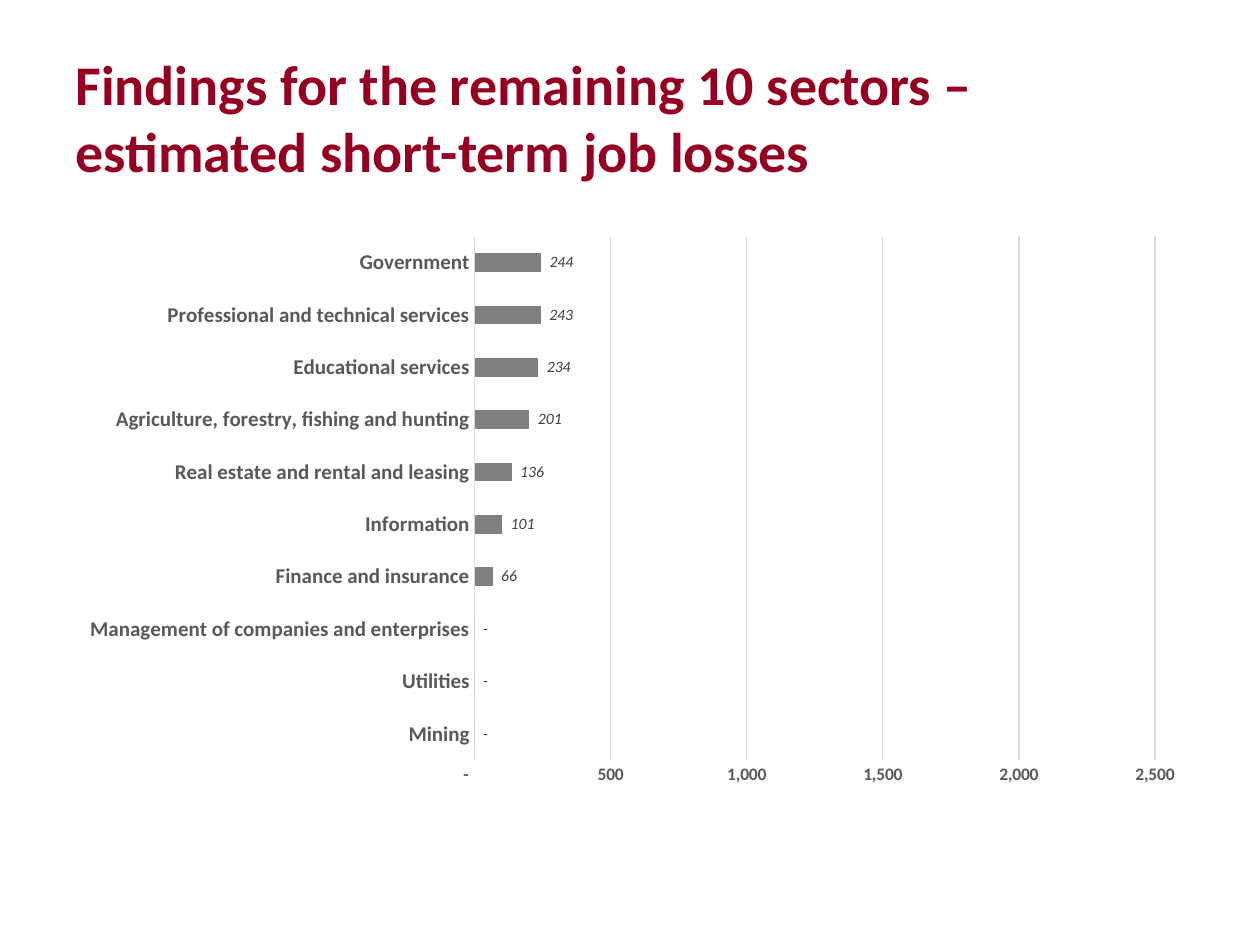
from typing import NamedTuple

from lxml import etree
from pptx import Presentation
from pptx.chart.data import CategoryChartData
from pptx.dml.color import RGBColor
from pptx.enum.chart import XL_CHART_TYPE, XL_LABEL_POSITION, XL_TICK_MARK
from pptx.enum.text import MSO_ANCHOR
from pptx.oxml.ns import qn
from pptx.util import Inches, Pt

BARS = XL_CHART_TYPE.BAR_CLUSTERED
OUTER = XL_LABEL_POSITION.OUTSIDE_END
NO_TICK = XL_TICK_MARK.NONE
MIDDLE = MSO_ANCHOR.MIDDLE

FACE = "Calibri"
RED, GREY, RULE = "950022", "595959", "D9D9D9"
COUNT = '_(* #,##0_);_(* \\(#,##0\\);_(* "-"??_);_('


class Box(NamedTuple):
    left: float
    top: float
    width: float
    height: float


class Sector(NamedTuple):
    name: str
    losses: int


SECTORS = [
    Sector("Mining", 0),
    Sector("Utilities", 0),
    Sector("Management of companies and enterprises", 0),
    Sector("Finance and insurance", 66),
    Sector("Information", 101),
    Sector("Real estate and rental and leasing", 136),
    Sector("Agriculture, forestry, fishing and hunting", 201),
    Sector("Educational services", 234),
    Sector("Professional and technical services", 243),
    Sector("Government", 244),
]


def paint(color, code: str) -> None:
    color.rgb = RGBColor.from_string(code)


def style(font, size: float, code: str, bold=False, italic=False) -> None:
    font.name, font.size = FACE, Pt(size)
    font.bold, font.italic = bold, italic
    paint(font.color, code)


def rule(line) -> None:
    """Give a line the thin light grey of the chart's rules."""
    paint(line.color, RULE)
    line.width = Pt(0.75)


def add_text(slide, box: Box, text: str, *, size: float, code: str,
             bold=False, anchor=MIDDLE) -> None:
    frame = slide.shapes.add_textbox(*map(Inches, box)).text_frame
    frame.word_wrap = True
    frame.vertical_anchor = anchor
    frame.text = text
    style(frame.paragraphs[0].font, size, code, bold)


def set_plot(chart, area: Box) -> None:
    """Fix the inner plot area, in fractions of the chart."""
    plot = chart.plots[0]._element.getparent()
    old = plot.find(qn("c:layout"))
    if old is not None:
        plot.remove(old)
    layout = etree.Element(qn("c:layout"))
    manual = etree.SubElement(layout, qn("c:manualLayout"))
    parts = [("layoutTarget", "inner"), ("xMode", "edge"), ("yMode", "edge")]
    parts += zip("xywh", area)
    for tag, value in parts:
        etree.SubElement(manual, qn(f"c:{tag}")).set("val", str(value))
    plot.insert(0, layout)


def add_bars(slide, box: Box, sectors: list[Sector]) -> None:
    data = CategoryChartData(number_format=COUNT)
    data.categories = [s.name for s in sectors]
    data.add_series("Series 1", [s.losses for s in sectors])
    chart = slide.shapes.add_chart(BARS, *map(Inches, box), data).chart
    chart.has_title = chart.has_legend = False
    style(chart.font, 10, "000000")
    set_plot(chart, Box(0.363, 0.027, 0.6, 0.892))

    names, scale = chart.category_axis, chart.value_axis
    for axis, size in ((names, 12), (scale, 10)):
        axis.major_tick_mark = axis.minor_tick_mark = NO_TICK
        style(axis.tick_labels.font, size, GREY, bold=True)
    rule(names.format.line)
    scale.format.line.fill.background()
    scale.minimum_scale, scale.maximum_scale = 0, 2500
    scale.major_unit = 500
    scale.has_major_gridlines = True
    rule(scale.major_gridlines.format.line)
    scale.tick_labels.number_format = COUNT
    scale.tick_labels.number_format_is_linked = False

    plot = chart.plots[0]
    plot.gap_width = 182
    plot.vary_by_categories = False
    bars = plot.series[0]
    bars.format.fill.solid()
    paint(bars.format.fill.fore_color, "808080")
    labels = bars.data_labels
    labels.show_value = True
    labels.position = OUTER
    labels.number_format = COUNT
    labels.number_format_is_linked = False
    style(labels.font, 9, "404040", italic=True)


def main() -> None:
    deck = Presentation()
    deck.slide_width, deck.slide_height = Inches(10), Inches(7.5)
    slide = deck.slides.add_slide(deck.slide_layouts[6])
    add_text(slide, Box(0.5, 0.3, 9, 1.25),
             "Findings for the remaining 10 sectors – "
             "estimated short-term job losses",
             size=32, code=RED, bold=True)
    add_bars(slide, Box(0.5, 1.75, 9, 4.66), SECTORS)
    deck.save("out.pptx")


if __name__ == "__main__":
    main()
